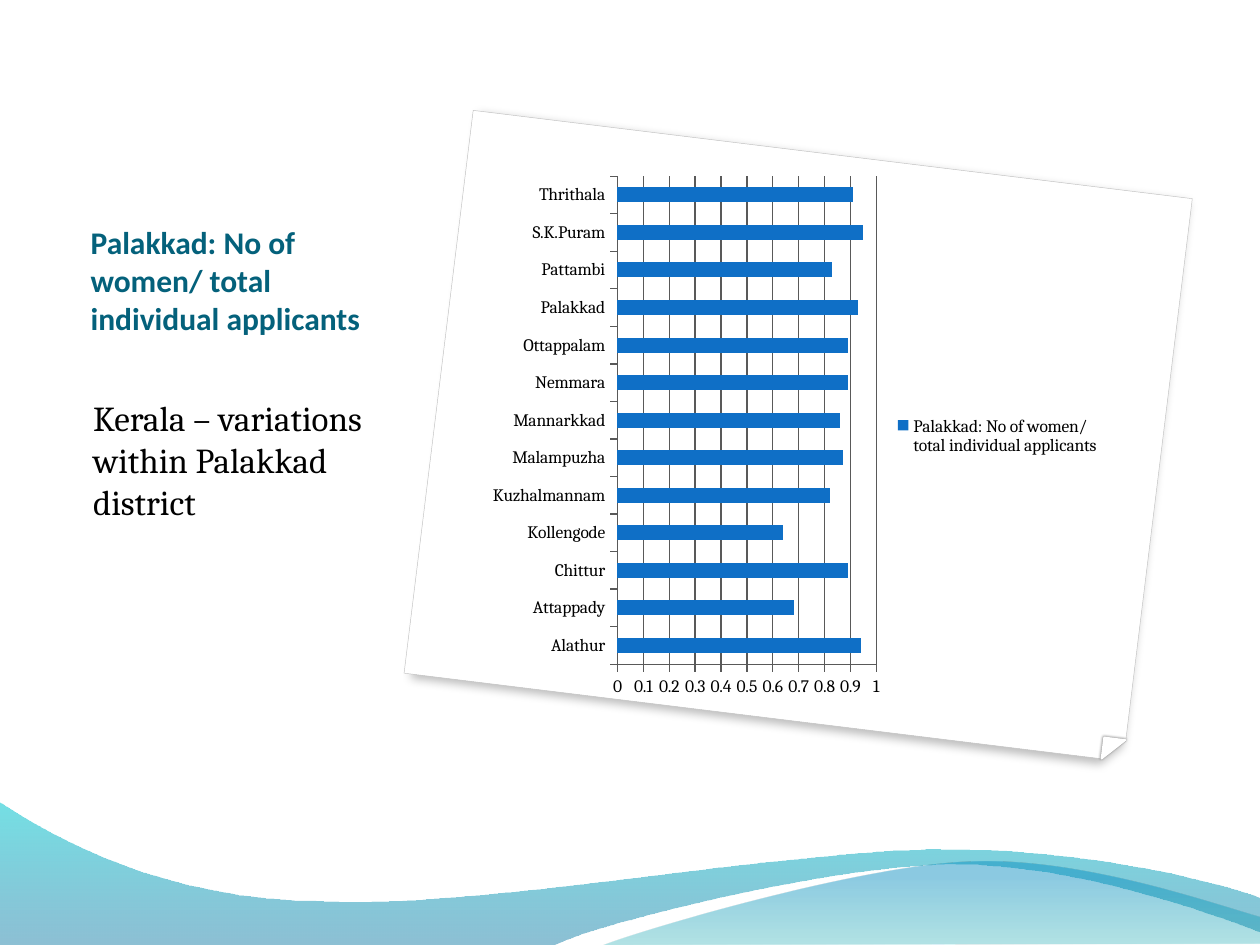
from lxml import etree
from pptx import Presentation
from pptx.chart.data import CategoryChartData
from pptx.dml.color import RGBColor
from pptx.enum.chart import XL_CHART_TYPE, XL_LEGEND_POSITION, XL_TICK_MARK
from pptx.enum.shapes import MSO_SHAPE
from pptx.enum.text import MSO_ANCHOR, PP_ALIGN
from pptx.oxml.ns import qn
from pptx.util import Pt

BAR = XL_CHART_TYPE.BAR_CLUSTERED
RIGHT = XL_LEGEND_POSITION.RIGHT
OUT = XL_TICK_MARK.OUTSIDE
PAPER = MSO_SHAPE.SNIP_ROUND_RECTANGLE
FOLD = MSO_SHAPE.RIGHT_TRIANGLE
TOP, BOTTOM = MSO_ANCHOR.TOP, MSO_ANCHOR.BOTTOM
LEFT = PP_ALIGN.LEFT

WHITE = RGBColor(255, 255, 255)
BLACK = RGBColor(0, 0, 0)
SILVER = RGBColor(0xC0, 0xC0, 0xC0)
GREY = RGBColor(0x59, 0x59, 0x59)
TEAL = RGBColor(0x04, 0x61, 0x7B)
BLUE = RGBColor(0x0F, 0x6F, 0xC6)
DEEP = RGBColor(0x00, 0x74, 0xA1)
CYAN = RGBColor(0x00, 0xC6, 0xCF)
SEA = RGBColor(0x00, 0xA1, 0xA9)
SKY = RGBColor(0x00, 0x8B, 0xBF)

TITLE = "Palakkad: No of women/ total individual applicants "
RATES = {
    "Alathur": 0.94, "Attappady": 0.68, "Chittur": 0.89, "Kollengode": 0.64,
    "Kuzhalmannam": 0.82, "Malampuzha": 0.87, "Mannarkkad": 0.86,
    "Nemmara": 0.89, "Ottappalam": 0.89, "Palakkad": 0.93,
    "Pattambi": 0.83, "S.K.Puram": 0.95, "Thrithala": 0.91,
}
BACK = [
    (0, 540), (316.8, 540),
    (342.7, 527, 478.1, 493.9, 545.8, 493.9),
    (614.2, 493.9, 689.8, 521.3, 720, 532.8),
    (720.7, 513.4),
    (707.8, 507.6, 626.4, 484.6, 537.1, 485.3),
    (447.8, 485.3, 275, 519.1, 185, 514.8),
    (92.9, 514.1, 33.1, 479.5, -0.7, 457.9),
]
FRONT = [
    (344.9, 540),
    (366.5, 531.4, 491, 494.6, 553.7, 492.5),
    (616.3, 489.6, 691.9, 516.2, 720, 524.2),
    (720, 539.3),
]


def write(frame, text, font="Cambria", size=20, color=BLACK, bold=False, gap=0):
    para = frame.paragraphs[0]
    para.alignment = LEFT
    para.space_before = Pt(gap)
    run = para.add_run()
    run.text = text
    run.font.name = font
    run.font.size = Pt(size)
    run.font.bold = bold
    run.font.color.rgb = color


def fade(color, alpha):
    etree.SubElement(color, qn("a:alpha"), val=str(alpha * 1000))


def curve(shape, steps):
    lines = list(shape._element.spPr.iter(qn("a:lnTo")))
    for line, step in zip(lines, steps):
        if len(step) == 2:
            continue
        bend = etree.Element(qn("a:cubicBezTo"))
        for x, y in (step[:2], step[2:4]):
            etree.SubElement(bend, qn("a:pt"), x=str(Pt(x) - shape.left),
                             y=str(Pt(y) - shape.top))
        bend.append(line[0])
        line.getparent().replace(line, bend)


class Deck:
    font = "Cambria"
    size = 10

    def __init__(self):
        self.file = Presentation()
        self.file.slide_width = Pt(720)
        self.file.slide_height = Pt(540)
        self.slide = self.file.slides.add_slide(self.file.slide_layouts[6])
        self.shapes = self.slide.shapes

    def sheet(self, kind, box, line, width, shade, bends=(), **skew):
        shape = self.shapes.add_shape(kind, *map(Pt, box))
        for i, bend in enumerate(bends):
            shape.adjustments[i] = bend
        shape.rotation = 7
        shape.fill.solid()
        shape.fill.fore_color.rgb = WHITE
        shape.line.color.rgb = line
        shape.line.width = Pt(width)
        shape.shadow.inherit = False
        props = shape._element.spPr
        props.find(qn("a:xfrm")).set("flipV", "1")
        alpha, blur, dist, angle = shade
        cast = etree.SubElement(
            props.find(qn("a:effectLst")), qn("a:outerShdw"),
            blurRad=str(Pt(blur)), dist=str(Pt(dist)),
            dir=str(angle * 60000), algn="tl", rotWithShape="0", **skew)
        fade(etree.SubElement(cast, qn("a:srgbClr"), val=str(BLACK)), alpha)

    def wave(self, steps, stops):
        dots = [(Pt(step[-2]), Pt(step[-1])) for step in steps]
        pen = self.shapes.build_freeform(*dots[0])
        pen.add_line_segments(dots[1:], close=True)
        shape = pen.convert_to_shape()
        curve(shape, steps[1:])
        shape.shadow.inherit = False
        shape.line.fill.background()
        shape.fill.gradient()
        shape.fill.gradient_angle = 90
        for stop, (place, color, _) in zip(shape.fill.gradient_stops, stops):
            stop.position = place
            stop.color.rgb = color
        colors = shape._element.spPr.iter(qn("a:srgbClr"))
        for color, (_, _, alpha) in zip(list(colors), stops):
            fade(color, alpha)

    def text(self, box, text, anchor=TOP, left=3.6, bottom=3.6, **style):
        frame = self.shapes.add_textbox(*map(Pt, box)).text_frame
        frame.word_wrap = True
        frame.vertical_anchor = anchor
        frame.margin_left = Pt(left)
        frame.margin_top = frame.margin_right = Pt(3.6)
        frame.margin_bottom = Pt(bottom)
        write(frame, text, **style)

    def chart(self, box, name, rates):
        data = CategoryChartData()
        data.categories = list(rates)
        data.add_series(name, list(rates.values()))
        chart = self.shapes.add_chart(BAR, *map(Pt, box), data).chart
        chart.has_title = False
        chart.font.name = self.font
        chart.font.size = Pt(self.size)
        chart.font.color.rgb = BLACK
        chart.has_legend = True
        chart.legend.position = RIGHT
        chart.legend.include_in_layout = False
        plot = chart.plots[0]
        plot.gap_width = 150
        plot.vary_by_categories = False
        bars = plot.series[0].format.fill
        bars.solid()
        bars.fore_color.rgb = BLUE
        scale = chart.value_axis
        scale.minimum_scale, scale.maximum_scale = 0, 1
        scale.major_unit = 0.1
        scale.has_major_gridlines = True
        for axis in (chart.category_axis, scale):
            axis.major_tick_mark = OUT
            self.rule(axis.format.line)
        self.rule(scale.major_gridlines.format.line)

    def rule(self, line):
        line.color.rgb = GREY
        line.width = Pt(0.75)


def main():
    deck = Deck()
    deck.sheet(PAPER, (249.1, 87.1, 414, 324), SILVER, 0.25,
               (25, 5, 3, 125), (0, 0.036),
               sx="98500", sy="100080", kx="100000")
    deck.sheet(FOLD, (630.2, 422.1, 12.2, 12.2), WHITE, 1, (47, 1.6, 0.5, 215))
    deck.wave(BACK, [(0, DEEP, 45), (1, CYAN, 55)])
    deck.wave(FRONT, [(0, SEA, 30), (0.8, SKY, 45)])
    deck.text((48.2, 92.9, 174.2, 124.6), TITLE, anchor=BOTTOM, bottom=25.2,
              font="Calibri", size=18, color=TEAL, bold=True)
    deck.text((48.2, 222.8, 174.2, 171.4),
              "Kerala – variations within Palakkad district", left=5, gap=2.5)
    deck.chart((274.3, 94.5, 363.6, 309.6), TITLE, RATES)
    deck.file.save("out.pptx")


if __name__ == "__main__":
    main()
